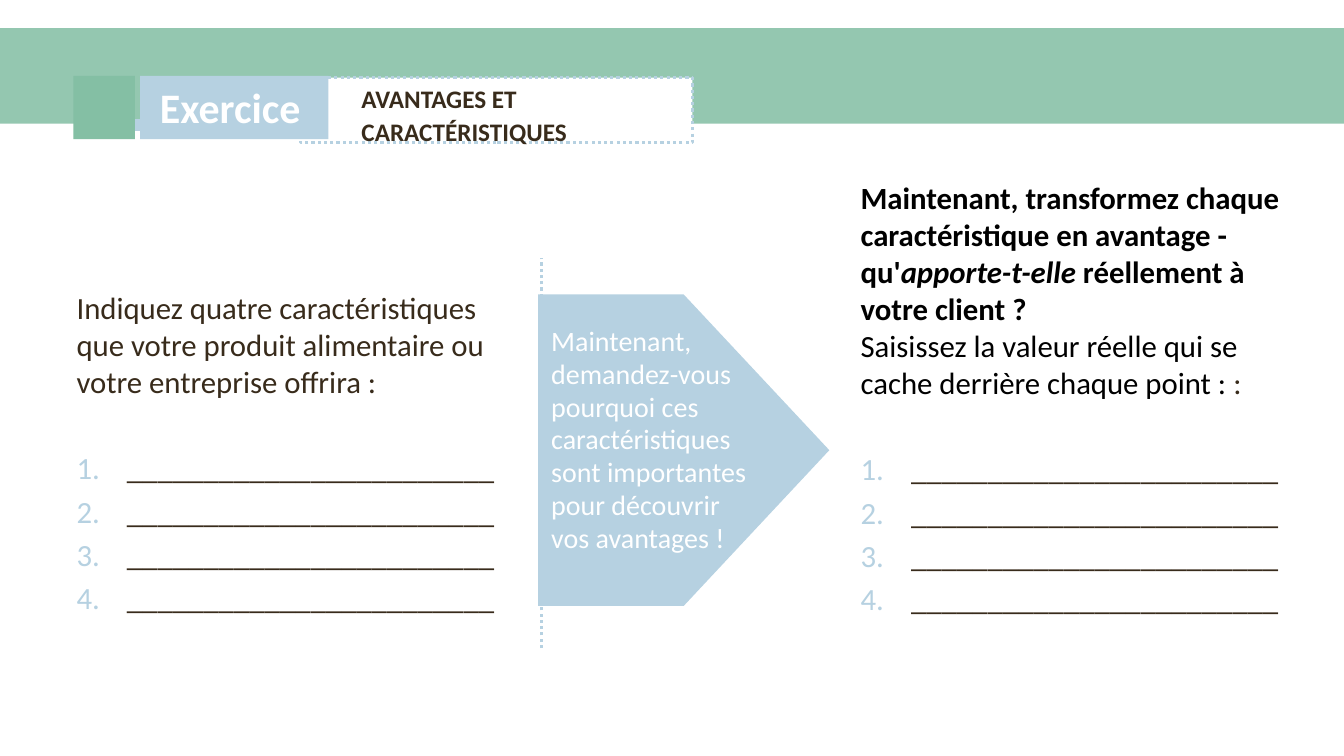
import pptx
import pptx.dml.color
import pptx.enum.dml
import pptx.enum.shapes
import pptx.enum.text
import pptx.oxml.ns
import pptx.util
from lxml import etree

Cm, Pt = pptx.util.Cm, pptx.util.Pt
RECT = pptx.enum.shapes.MSO_SHAPE.RECTANGLE
ARROW = pptx.enum.shapes.MSO_SHAPE.PENTAGON
TOP = pptx.enum.text.MSO_ANCHOR.TOP
BOTTOM = pptx.enum.text.MSO_ANCHOR.BOTTOM

FONT = "Calibri"
BLUE, GREEN, DARK_GREEN = "B6D1E1", "94C7B0", "84BFA4"
BROWN, WHITE, BLACK = "382B1B", "FFFFFF", "000000"

ANSWER = "________________________"
ANSWER_COUNT = 4
TAG = [("Exercice", WHITE, True, False)]
TITLE = [("AVANTAGES ET CARACTÉRISTIQUES", BROWN, True, False)]
FEATURES = [
    ("Indiquez quatre caractéristiques que votre produit alimentaire ou "
     "votre entreprise offrira :", BROWN, False, False),
]
QUESTION = [
    ("Maintenant, demandez-vous pourquoi ces caractéristiques sont importantes "
     "pour découvrir vos avantages !", WHITE, False, False),
]
BENEFITS = [
    ("Maintenant, transformez chaque caractéristique en avantage - qu'", BLACK, True, False),
    ("apporte-t-elle ", BLACK, True, True),
    ("réellement à votre client ?", BLACK, True, False),
    None,
    ("Saisissez la valeur réelle qui se cache derrière chaque point : ", BLACK, False, False),
    (":", BROWN, False, False),
]

HEADER = [
    ((0, 0.71, 33.87, 2.41), GREEN),
    ((2.16, 3, 4.7, 0.3), BLUE),
]
TAG_BLOCKS = [
    ((3.53, 1.91, 4.75, 1.6), BLUE),
    ((1.85, 1.91, 1.55, 1.6), DARK_GREEN),
]
TITLE_FRAME = (7.57, 1.96, 9.88, 1.63)
DIVIDER_X, DIVIDER_TOP, DIVIDER_BOTTOM = 13.64, 6.5, 16.33
ARROW_BOX = (13.56, 7.42, 7.34, 7.85)


def rgb(color):
    return pptx.dml.color.RGBColor.from_string(color)


def dot(line):
    line.color.rgb = rgb(BLUE)
    line.width = Pt(2.25)
    line.dash_style = pptx.enum.dml.MSO_LINE.ROUND_DOT


def add_block(s, box, color, kind=RECT):
    sp = s.shapes.add_shape(kind, *map(Cm, box))
    sp.shadow.inherit = False
    sp.fill.solid()
    sp.fill.fore_color.rgb = rgb(color)
    sp.line.fill.background()
    return sp


def add_runs(p, runs, size):
    for run in runs:
        if run is None:
            p.add_line_break()
            continue
        text, color, bold, italic = run
        r = p.add_run()
        r.text = text
        r.font.name, r.font.size = FONT, Pt(size)
        r.font.bold, r.font.italic = bold, italic
        r.font.color.rgb = rgb(color)


def add_text(s, box, runs, size, spacing=None, anchor=TOP):
    tf = s.shapes.add_textbox(*map(Cm, box)).text_frame
    tf.word_wrap = True
    tf.vertical_anchor = anchor
    p = tf.paragraphs[0]
    p.line_spacing = spacing
    add_runs(p, runs, size)
    return tf


def number(p):
    qn = pptx.oxml.ns.qn
    pPr = p._p.get_or_add_pPr()
    pPr.set("marL", str(Cm(1.27)))
    pPr.set("indent", str(-Cm(1.27)))
    color = etree.SubElement(pPr, qn("a:buClr"))
    etree.SubElement(color, qn("a:srgbClr")).set("val", BLUE)
    etree.SubElement(pPr, qn("a:buFont")).set("typeface", "+mj-lt")
    etree.SubElement(pPr, qn("a:buAutoNum")).set("type", "arabicPeriod")


def add_exercise(s, box, runs):
    tf = add_text(s, box, runs, 22)
    for i in range(ANSWER_COUNT):
        p = tf.add_paragraph()
        number(p)
        p.space_before = Pt(4.4 if i else 35.2)
        add_runs(p, [(ANSWER, BROWN, False, False)], 22)


def main():
    prs = pptx.Presentation()
    prs.slide_width, prs.slide_height = Cm(33.87), Cm(19.05)
    s = prs.slides.add_slide(prs.slide_layouts[6])

    for box, color in HEADER:
        add_block(s, box, color)

    divider = s.shapes.add_connector(
        pptx.enum.shapes.MSO_CONNECTOR.STRAIGHT,
        Cm(DIVIDER_X), Cm(DIVIDER_BOTTOM), Cm(DIVIDER_X), Cm(DIVIDER_TOP))
    dot(divider.line)
    etree.SubElement(divider._element.spPr, pptx.oxml.ns.qn("a:effectLst"))

    dot(add_block(s, TITLE_FRAME, WHITE).line)
    for box, color in TAG_BLOCKS:
        add_block(s, box, color)
    add_text(s, (3.78, 2.39, 5.82, 1.07), TAG, 30, 1.5, BOTTOM)
    add_text(s, (8.86, 1.91, 8.05, 1.17), TITLE, 18, Pt(23.4))

    add_exercise(s, (1.68, 7.16, 11.43, 9.55), FEATURES)
    add_block(s, ARROW_BOX, BLUE, ARROW)
    add_text(s, (13.64, 8.05, 5.77, 5.99), QUESTION, 20, Pt(23.4))
    add_exercise(s, (21.44, 4.39, 11.43, 10.87), BENEFITS)

    prs.save("out.pptx")


if __name__ == "__main__":
    main()
